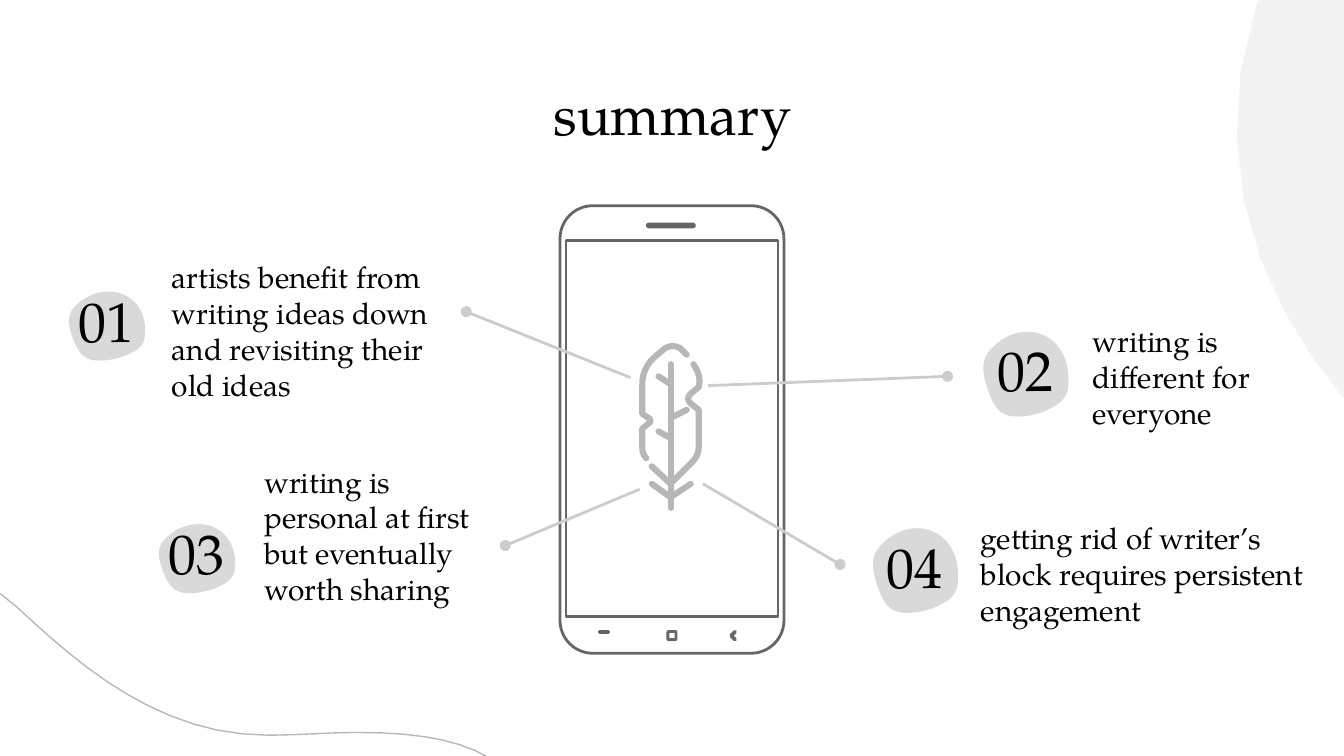
from lxml import etree
from pptx import Presentation
from pptx.dml.color import RGBColor
from pptx.enum.shapes import MSO_CONNECTOR, MSO_SHAPE
from pptx.enum.text import MSO_ANCHOR, PP_ALIGN
from pptx.oxml.ns import qn
from pptx.util import Pt

BLACK = RGBColor(0x00, 0x00, 0x00)
PHONE_GRAY = RGBColor(0x66, 0x66, 0x66)
FEATHER_GRAY = RGBColor(0xB7, 0xB7, 0xB7)
POINTER_GRAY = RGBColor(0xCC, 0xCC, 0xCC)
BLOB_GRAY = RGBColor(0xD9, 0xD9, 0xD9)
PALE_GRAY = RGBColor(0xF3, 0xF3, 0xF3)
STRAIGHT = MSO_CONNECTOR.STRAIGHT
RECTANGLE, ROUNDED = MSO_SHAPE.RECTANGLE, MSO_SHAPE.ROUNDED_RECTANGLE
LEFT, CENTER = PP_ALIGN.LEFT, PP_ALIGN.CENTER
TOP, MIDDLE, BOTTOM = MSO_ANCHOR.TOP, MSO_ANCHOR.MIDDLE, MSO_ANCHOR.BOTTOM
FONT = "TeX Gyre Pagella"
UNIT = 0.72
STEPS = 12

BACKDROP = [(1076, 0), (1076, 367), (1068, 363, 862, 219, 936, 0)]
WAVE = [
    (403, 608), (379, 560, 341, 545, 266, 545), (245, 545, 222, 547, 199, 547),
    (120, 547, 61, 497, 13, 452), (-39, 404, -119, 407, -159, 467), (-159, 608),
]
BLOB = [
    (54, 0), (36, 0, 20, 10, 9, 25), (0, 38, 5, 56, 9, 68), (16, 90, 24, 100, 42, 100),
    (58, 100, 72, 95, 82, 89), (100, 80, 100, 66, 100, 56), (100, 20, 78, 0, 54, 0),
]
FEATHER_STROKES = [
    [(35, 9), (30, 4), (26, 2, 22, 2, 18, 5), (12, 10), (5, 16, 2, 23, 2, 31), (2, 53),
     (8, 57), (8, 59), (2, 64), (2, 78), (2, 81, 3, 84, 5, 86)],
    [(40, 16), (45, 23, 45, 29, 44, 33), (38, 38), (35, 41, 36, 44, 39, 46), (44, 50),
     (44, 77), (44, 82, 42, 86, 39, 89), (23, 105), (9, 92)],
    [(23, 16), (23, 123)],
    [(14, 25), (23, 31)],
    [(14, 66), (23, 71)],
    [(35, 50), (23, 56)],
    [(9, 105), (23, 115), (38, 105)],
]

deck = Presentation()
deck.slide_width, deck.slide_height = Pt(720), Pt(405)
page = deck.slides.add_slide(deck.slide_layouts[6])


def add_outline(segments, left=0, top=0, scale_x=UNIT, scale_y=UNIT, fill=None, line=None,
                weight=0.75, close=True):
    points = [segments[0]]
    for segment in segments[1:]:
        if len(segment) == 2:
            points.append(segment)
            continue
        start, first, second, end = points[-1], segment[:2], segment[2:4], segment[4:]
        for step in range(1, STEPS + 1):
            t = step / STEPS
            u = 1 - t
            points.append([u**3 * a + 3 * u * u * t * b + 3 * u * t * t * c + t**3 * d
                           for a, b, c, d in zip(start, first, second, end)])
    placed = [(Pt(left + x * scale_x), Pt(top + y * scale_y)) for x, y in points]
    builder = page.shapes.build_freeform(*placed[0], scale=1.0)
    builder.add_line_segments(placed[1:], close=close)
    shape = builder.convert_to_shape()
    shape.shadow.inherit = False
    for paint, color in ((shape.fill, fill), (shape.line.fill, line)):
        if color is None:
            paint.background()
        else:
            paint.solid()
            paint.fore_color.rgb = color
    if line is not None:
        shape.line.width = Pt(weight)
        stroke = shape.line._get_or_add_ln()
        stroke.set("cap", "rnd")
        etree.SubElement(stroke, qn("a:round"))


def add_text(text, left, top, width, height, size, align, anchor, inset=7.2):
    box = page.shapes.add_textbox(Pt(left), Pt(top), Pt(width), Pt(height))
    frame = box.text_frame
    frame.word_wrap = True
    frame.vertical_anchor = anchor
    frame.margin_left = frame.margin_right = Pt(inset)
    frame.margin_top = frame.margin_bottom = Pt(inset)
    para = frame.paragraphs[0]
    para.alignment = align
    span = para.add_run()
    span.text = text
    span.font.name = FONT
    span.font.size = Pt(size)
    span.font.color.rgb = BLACK


add_outline(BACKDROP, fill=PALE_GRAY)
add_outline(WAVE, line=FEATHER_GRAY)
add_text("summary", 56.9, 42.5, 607, 45.4, 30, CENTER, TOP, inset=0)

phone_parts = [
    (ROUNDED, 360, 110.2, 120, 239.8, 0.147, False),
    (RECTANGLE, 360, 128.8, 113.6, 201.5, None, False),
    (ROUNDED, 359.4, 120, 25.2, 1.6, 0.5, True),
    (RECTANGLE, 323.6, 338.3, 5, 0.5, None, True),
    (ROUNDED, 360, 338.3, 4.4, 4.4, 0.1, False),
]
for kind, center, top, width, height, rounding, solid in phone_parts:
    part = page.shapes.add_shape(kind, Pt(center - width / 2), Pt(top), Pt(width), Pt(height))
    part.shadow.inherit = False
    if rounding is not None:
        part.adjustments[0] = rounding
    if solid:
        part.fill.solid()
        part.fill.fore_color.rgb = PHONE_GRAY
    else:
        part.fill.background()
    part.line.color.rgb = PHONE_GRAY
    part.line.width = Pt(1.5)
add_outline([(547, 470), (544, 473), (547, 476)], line=PHONE_GRAY, weight=2, close=False)

for feather_stroke in FEATHER_STROKES:
    add_outline(feather_stroke, 342.7, 183.6, line=FEATHER_GRAY, weight=3.3, close=False)

pointers = [
    (337.7, 202.3, 249.8, 167),
    (379.4, 206.6, 507.6, 201.6),
    (342.7, 262.1, 270.7, 292.3),
    (376.6, 259.2, 450, 302.4),
]
for pointer in pointers:
    connector = page.shapes.add_connector(STRAIGHT, *[Pt(value) for value in pointer])
    connector.line.color.rgb = POINTER_GRAY
    connector.line.width = Pt(1.5)
    etree.SubElement(connector.line._get_or_add_ln(), qn("a:tailEnd"), type="oval")
    etree.SubElement(connector._element.spPr, qn("a:effectLst"))

SMALL, LARGE = (42.5, 37, 3.4), (47.5, 45.4, 0)
ideas = [
    ("01", SMALL, (35.3, 156.2), (85, 136.1, 172.8, 82.1),
     "artists benefit from writing ideas down and revisiting their old ideas"),
    ("02", LARGE, (524.9, 177.8), (578.2, 187.2, 121.7, 28.8),
     "writing is different for everyone"),
    ("03", SMALL, (83.5, 280.8), (134.6, 272.2, 136.8, 28.8),
     "writing is personal at first but eventually worth sharing"),
    ("04", LARGE, (465.8, 283), (518.4, 293, 190.1, 28.8),
     "getting rid of writer’s block requires persistent engagement"),
]
for number, (width, height, drop), (left, top), text_area, text in ideas:
    add_outline(BLOB, left, top, width / 100, height / 100, fill=BLOB_GRAY)
    add_text(number, left - 2.5, top + drop, width + 6, height, 30, CENTER, BOTTOM)
    add_text(text, *text_area, 16, LEFT, MIDDLE)

deck.save("out.pptx")
